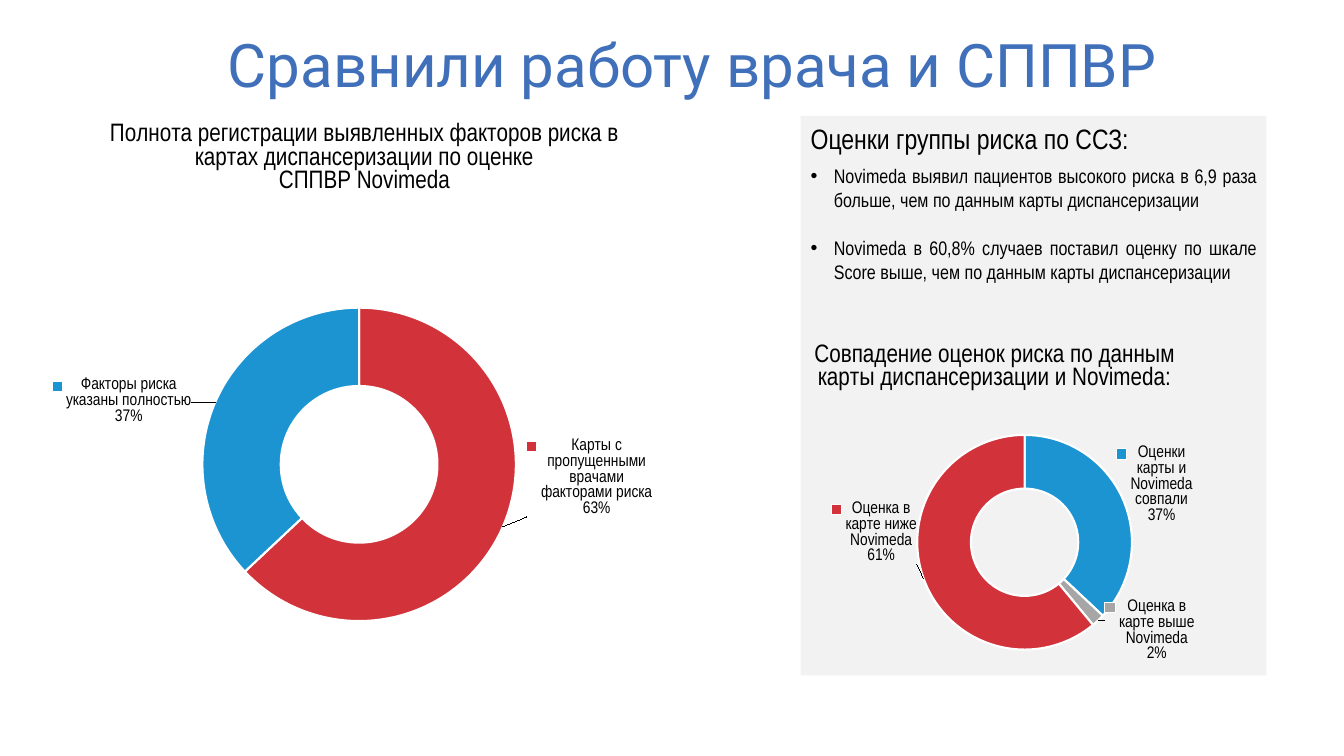
from dataclasses import dataclass

from pptx import Presentation, util as u
from pptx.chart.data import CategoryChartData
from pptx.dml.color import RGBColor
from pptx.enum import chart as ch, shapes, text
from pptx.oxml import ns, parse_xml


@dataclass(frozen=True)
class Theme:
    """Colours, fonts and type sizes of the slide."""
    head: str = "4170BA"
    ink: str = "000000"
    panel: str = "F2F2F2"
    edge: str = "FFFFFF"
    blue: str = "1C94D2"
    red: str = "D2333B"
    gray: str = "A6A6A6"
    font: str = "Arial Narrow"
    display: str = "Roboto"
    big: float = 42.9
    lead: float = 20
    name: float = 18
    item: float = 14
    label: int = 12
    base: float = 10


@dataclass(frozen=True)
class Slice:
    """One ring sector, its label shift and label size as shares of the chart."""
    name: str
    value: int
    color: str
    shift: tuple[float, float]
    size: tuple[float, float]


@dataclass(frozen=True)
class Ring:
    """One doughnut chart."""
    box: tuple[float, ...]
    title: tuple[str, ...]
    spot: tuple[float, float]
    plot: tuple[float, ...]
    cuts: tuple[Slice, ...]


@dataclass(frozen=True)
class Line:
    """One paragraph of the findings."""
    words: str
    size: float
    bullet: bool = False
    before: float = 0


T = Theme()
HEAD = "Сравнили работу врача и СППВР"
LINES = (
    Line("Оценки группы риска по ССЗ:", T.lead),
    Line("Novimeda выявил пациентов высокого риска в 6,9 раза больше, "
         "чем по данным карты диспансеризации", T.item, True),
    Line("Novimeda в 60,8% случаев поставил оценку по шкале Score выше, "
         "чем по данным карты диспансеризации", T.item, True, 12),
)
RINGS = (
    Ring((7.94, 3.05, 4.63, 3.67),
         ("Совпадение оценок риска по данным карты диспансеризации и Novimeda:",),
         (0.02, 0.08), (0.25, 0.34, 0.46, 0.73), (
             Slice("Оценки карты и Novimeda совпали", 37, T.blue, (0.12, -0.07), (0.17, 0.22)),
             Slice("Оценка в карте выше Novimeda", 2, T.gray, (0.15, 0.08), (0.19, 0.18)),
             Slice("Оценка в карте ниже Novimeda", 61, T.red, (-0.16, -0.1), (0.18, 0.18)))),
    Ring((0.25, 1.07, 6.76, 5.57),
         ("Полнота регистрации выявленных факторов риска в картах диспансеризации по оценке",
          "СППВР Novimeda"),
         (0.12, 0.02), (0.26, 0.33, 0.46, 0.73), (
             Slice("Карты с пропущенными врачами факторами риска", 63, T.red,
                   (0.18, -0.06), (0.18, 0.15)),
             Slice("Факторы риска указаны полностью", 37, T.blue,
                   (-0.19, -0.03), (0.16, 0.12)))),
)


def inches(box: tuple[float, ...]) -> list[u.Length]:
    """Turn numbers into lengths."""
    return [u.Inches(n) for n in box]


def style(font, size: float, color: str = T.ink, face: str = T.font) -> None:
    """Format one font."""
    font.size, font.name, font.bold = u.Pt(size), face, False
    font.color.rgb = RGBColor.from_string(color)


def write(para, words: str, size: float, color: str = T.ink, face: str = T.font) -> None:
    """Add one formatted run."""
    run = para.add_run()
    run.text = words
    style(run.font, size, color, face)


def move(shape, box: tuple[float, ...]) -> None:
    """Set the place and size of a shape."""
    shape.left, shape.top, shape.width, shape.height = inches(box)


def layout(tags: str, nums: tuple[float, ...], modes: str = "") -> str:
    """Give the XML of a manual layout."""
    rows = "".join(f'<c:{t} val="{n}"/>' for t, n in zip(tags, nums))
    return f'<c:layout {ns.nsdecls("c")}><c:manualLayout>{modes}{rows}</c:manualLayout></c:layout>'


def place(host, at: int, words: str) -> None:
    """Replace the layout of a chart element."""
    for old in host.findall(ns.qn("c:layout")):
        host.remove(old)
    host.insert(at, parse_xml(words))


def labels(cuts: tuple[Slice, ...]) -> str:
    """Give the XML of the sector labels."""
    font = (f'<c:txPr><a:bodyPr/><a:p><a:pPr><a:defRPr sz="{T.label * 100}" b="0"><a:solidFill>'
            f'<a:srgbClr val="{T.ink}"/></a:solidFill><a:latin typeface="{T.font}"/>'
            '</a:defRPr></a:pPr><a:endParaRPr lang="ru-RU"/></a:p></c:txPr>')
    flags = (("LegendKey", 1), ("Val", 0), ("CatName", 1), ("SerName", 0),
             ("Percent", 1), ("BubbleSize", 0))
    show = "".join(f'<c:show{k} val="{v}"/>' for k, v in flags) + "<c:separator>\n</c:separator>"
    rows = ""
    for i, cut in enumerate(cuts):
        wide, high = cut.size
        rows += (f'<c:dLbl><c:idx val="{i}"/>{layout("xy", cut.shift)}{font}{show}'
                 '<c:extLst><c:ext uri="{CE6537A1-D6FC-4f65-9D91-7224C49458BB}" xmlns:c15='
                 '"http://schemas.microsoft.com/office/drawing/2012/chart"><c15:layout>'
                 f'<c:manualLayout><c:w val="{wide}"/><c:h val="{high}"/></c:manualLayout>'
                 '</c15:layout></c:ext></c:extLst></c:dLbl>')
    return (f'<c:dLbls {ns.nsdecls("c", "a")}>{rows}{font}{show}'
            '<c:showLeaderLines val="1"/></c:dLbls>')


def draw(slide, ring: Ring) -> None:
    """Draw one doughnut chart."""
    data = CategoryChartData()
    data.categories = [c.name for c in ring.cuts]
    data.add_series("Series 1", [c.value for c in ring.cuts])
    chart = slide.shapes.add_chart(ch.XL_CHART_TYPE.DOUGHNUT, *inches(ring.box), data).chart
    style(chart.font, T.base)
    chart.has_legend = False
    title = chart.chart_title
    frame = title.text_frame
    for i, words in enumerate(ring.title):
        para = frame.add_paragraph() if i else frame.paragraphs[0]
        write(para, words, T.name)
    edges = '<c:xMode val="edge"/><c:yMode val="edge"/>'
    place(title._element, 1, layout("xy", ring.spot, edges))
    area = chart._chartSpace.chart.plotArea
    place(area, 0, layout("xywh", ring.plot, '<c:layoutTarget val="inner"/>' + edges))
    next(area.iter(ns.qn("c:holeSize"))).set("val", "59")
    plot = chart.plots[0]
    plot.vary_by_categories = True
    row = plot.series[0]
    for i, cut in enumerate(ring.cuts):
        form = row.points[i].format
        form.fill.solid()
        form.fill.fore_color.rgb = RGBColor.from_string(cut.color)
        form.line.color.rgb = RGBColor.from_string(T.edge)
        form.line.width = u.Pt(1.5)
    for old in area.findall(".//" + ns.qn("c:dLbls")):
        old.getparent().remove(old)
    row._element.find(ns.qn("c:cat")).addprevious(parse_xml(labels(ring.cuts)))


def fill(body) -> None:
    """Write the findings into the body placeholder."""
    move(body, (7.94, 1.16, 4.63, 1.7))
    frame = body.text_frame
    frame.auto_size = text.MSO_AUTO_SIZE.NONE
    for i, line in enumerate(LINES):
        para = frame.add_paragraph() if i else frame.paragraphs[0]
        para.alignment = text.PP_ALIGN.JUSTIFY
        para.space_before, para.space_after = u.Pt(line.before), u.Pt(6)
        props = para._p.get_or_add_pPr()
        dent = u.Inches(0.23) if line.bullet else 0
        props.set("marL", str(dent))
        props.set("indent", str(-dent))
        mark = 'buChar {} char="•"' if line.bullet else "buNone {}"
        props.append(parse_xml(f'<a:{mark.format(ns.nsdecls("a"))}/>'))
        write(para, line.words, line.size)


def main() -> None:
    """Build and save the slide."""
    deck = Presentation()
    deck.slide_width, deck.slide_height = inches((13.33, 7.5))
    slide = deck.slides.add_slide(deck.slide_layouts[1])
    panel = slide.shapes.add_shape(shapes.MSO_SHAPE.RECTANGLE, *inches((7.94, 1.15, 4.62, 5.55)))
    panel.shadow.inherit = False
    panel.fill.solid()
    panel.fill.fore_color.rgb = RGBColor.from_string(T.panel)
    panel.line.fill.background()
    slide.shapes._spTree.insert(2, panel._element)
    title = slide.shapes.title
    move(title, (0.84, 0.29, 12.05, 0.76))
    title.text_frame.auto_size = text.MSO_AUTO_SIZE.NONE
    para = title.text_frame.paragraphs[0]
    para.alignment, para.line_spacing = text.PP_ALIGN.CENTER, 0.9
    write(para, HEAD, T.big, T.head, T.display)
    fill(slide.placeholders[1])
    for ring in RINGS:
        draw(slide, ring)
    deck.save("out.pptx")


if __name__ == "__main__":
    main()
